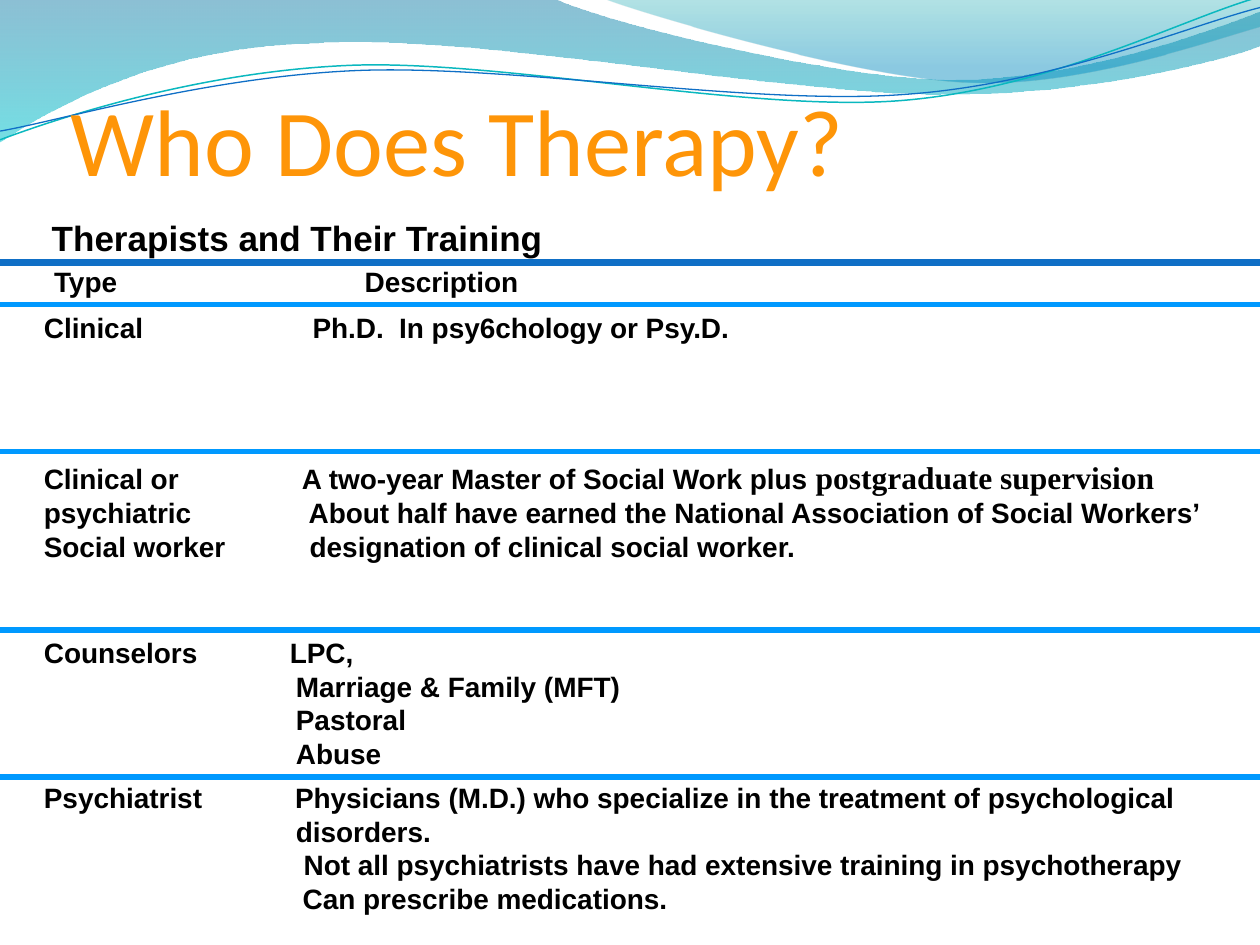
from pptx import Presentation
from pptx.util import Pt
from pptx.dml.color import RGBColor
from pptx.enum.shapes import MSO_CONNECTOR
from pptx.enum.text import MSO_ANCHOR
from pptx.oxml.ns import qn
from lxml.etree import SubElement

THEME = {
    "ink": "000000", "title": "FE9508", "rule": "0099FF", "bar": "0F6FC6", "teal": "0AB8BF",
    "body": "Arial", "head": "Calibri", "serif": "Times New Roman",
    "big": 54, "mid": 20, "note": 18, "text": 16,
}
WIDE, HIGH = 720, 540

BANDS = [
    ([(0, 0), (316.8, -0.7),
      (342.7, 12.2, 478.1, 45.4, 545.8, 45.4),
      (614.2, 45.4, 689.8, 18.7, 720, 6.5), (720.7, 25.9),
      (707.8, 31.7, 626.4, 54.7, 537.1, 54),
      (446.4, 54, 275, 20.2, 185, 24.5),
      (92.9, 25.9, 33.1, 59.8, -0.7, 81.4), (0, 0)],
     [(0, "0074A1", 45), (1, "00C6CF", 55)]),
    ([(344.9, -0.7),
      (366.5, 7.9, 491, 44.6, 553.7, 46.8),
      (616.3, 49.7, 691.9, 23, 720, 15.1), (720, 0), (344.9, -0.7)],
     [(0, "00A1A9", 30), (0.8, "008BBF", 45)]),
]
WAVES = [
    ([(0, 79.9),
      (34.6, 67, 113.8, 41, 199.4, 37.4),
      (284.4, 33.8, 427, 64.1, 513.4, 57.6),
      (599.8, 51.1, 675.4, 10.8, 718.6, -1.4)], "teal", 0.85),
    ([(0, 74.9),
      (33.8, 69.1, 118.1, 43.9, 203.8, 40.3),
      (290.2, 36.7, 429.8, 60.5, 516.2, 54),
      (601.9, 48.2, 677.5, 15.1, 720, 4.3)], "bar", 0.75),
]
RULES = [(150, "bar", 4.5)] + [(y, "rule", 3) for y in (174, 258, 360, 444)]

ROWS = [
    ((23.8, 147.6, 283.7, 26.6), 177.5, ["Type\tDescription"]),
    ((18, 174.2, 702, 26.6), 153.5, ["Clinical\tPh.D.  In psy6chology or Psy.D."]),
    ((18, 258.1, 690, 67.7), 147.5, [
        "Clinical or\tA two-year Master of Social Work plus ",
        "psychiatric\t About half have earned the National Association of Social Workers’",
        "Social worker\t designation of clinical social worker."]),
    ((18, 359.7, 702, 103.7), 140.5, [
        "Counselors\tLPC,",
        "\t\tMarriage & Family (MFT)",
        "\t\tPastoral",
        "\t\tAbuse"]),
    ((18, 442.5, 702, 84.2), 143.5, [
        "Psychiatrist\tPhysicians (M.D.) who specialize in the treatment of psychological",
        "\t\tdisorders.",
        "\t\t Not all psychiatrists have had extensive training in psychotherapy"
        "\v\t Can prescribe medications."]),
]
EXTRA = {2: "postgraduate supervision"}


def hue(key):
    return RGBColor.from_string(THEME.get(key, key))


def add_path(slide, steps, close):
    ends = [(Pt(step[-2]), Pt(step[-1])) for step in steps]
    pen = slide.shapes.build_freeform(*ends[0])
    pen.add_line_segments(ends[1:], close=close)
    shape = pen.convert_to_shape()
    shape.shadow.inherit = False
    parts = list(shape._element.spPr.iter(qn("a:lnTo")))
    for part, step in zip(parts, steps[1:]):
        if len(step) == 6:
            part.tag = qn("a:cubicBezTo")
            part.clear()
            for x, y in zip(step[::2], step[1::2]):
                dot = SubElement(part, qn("a:pt"))
                dot.set("x", str(Pt(x) - shape.left))
                dot.set("y", str(Pt(y) - shape.top))
    return shape


def add_band(slide, steps, stops):
    shape = add_path(slide, steps, True)
    shape.line.fill.background()
    shape.fill.gradient()
    shape.fill.gradient_angle = 270
    for stop, (spot, color, _) in zip(shape.fill.gradient_stops, stops):
        stop.position = spot
        stop.color.rgb = hue(color)
    marks = shape._element.spPr.iter(qn("a:srgbClr"))
    for mark, (_, _, alpha) in zip(list(marks), stops):
        SubElement(mark, qn("a:alpha")).set("val", str(alpha * 1000))


def add_wave(slide, steps, color, size):
    shape = add_path(slide, steps, False)
    shape.fill.background()
    shape.line.color.rgb = hue(color)
    shape.line.width = Pt(size)


def add_rule(slide, y, color, size):
    line = slide.shapes.add_connector(MSO_CONNECTOR.STRAIGHT, 0, Pt(y), Pt(WIDE), Pt(y))
    line.line.color.rgb = hue(color)
    line.line.width = Pt(size)
    SubElement(line._element.spPr, qn("a:effectLst"))


def style(run, size="text", face="body", color="ink", bold=True):
    font = run.font
    font.size, font.name, font.bold = Pt(THEME[size]), THEME[face], bold
    font.color.rgb = hue(color)


def add_text(slide, area, lines, **look):
    frame = slide.shapes.add_textbox(*map(Pt, area)).text_frame
    frame.word_wrap = True
    frame.text = "\n".join(lines)
    for para in frame.paragraphs:
        for run in para.runs:
            style(run, **look)
    return frame


def add_stop(para, place):
    tabs = SubElement(para._p.get_or_add_pPr(), qn("a:tabLst"))
    tab = SubElement(tabs, qn("a:tab"))
    tab.set("pos", str(Pt(place)))
    tab.set("algn", "l")


def main():
    deck = Presentation()
    deck.slide_width, deck.slide_height = Pt(WIDE), Pt(HIGH)
    slide = deck.slides.add_slide(deck.slide_layouts[6])
    for band in BANDS:
        add_band(slide, *band)
    for wave in WAVES:
        add_wave(slide, *wave)

    title = add_text(slide, (40.3, 21.6, 582.5, 90), ["Who Does Therapy?"],
                     size="big", face="head", color="title", bold=False)
    title.vertical_anchor = MSO_ANCHOR.BOTTOM
    title.margin_left = title.margin_right = title.margin_bottom = 0
    add_text(slide, (22.5, 120.2, 295.2, 31), ["Therapists and Their Training"], size="mid")

    for rule in RULES:
        add_rule(slide, *rule)
    for i, (area, stop, lines) in enumerate(ROWS):
        first = add_text(slide, area, lines).paragraphs[0]
        add_stop(first, stop)
        if i in EXTRA:
            run = first.add_run()
            run.text = EXTRA[i]
            style(run, "note", "serif")
    deck.save("out.pptx")


if __name__ == "__main__":
    main()
